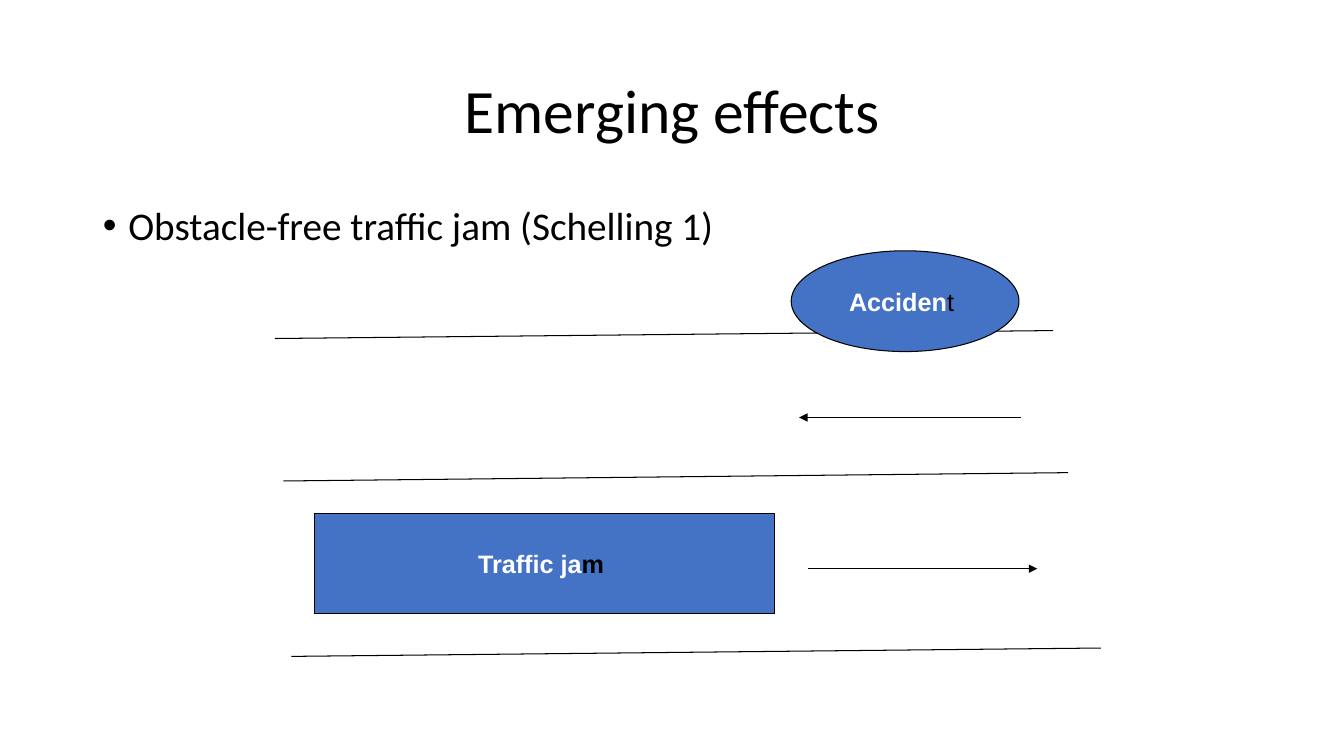
from dataclasses import dataclass

from lxml.etree import SubElement
from pptx import Presentation
from pptx.dml.color import RGBColor
from pptx.enum.shapes import MSO_CONNECTOR, MSO_SHAPE
from pptx.enum.text import MSO_ANCHOR, PP_ALIGN
from pptx.oxml.ns import qn
from pptx.util import Cm, Pt

COLORS = {"ink": "000000", "fill": "4472C4", "label": "FFFFFF", "background": "FFFFFF"}


@dataclass(frozen=True)
class Line:
    x1: float
    y1: float
    x2: float
    y2: float
    arrow: bool = False


@dataclass(frozen=True)
class Run:
    text: str
    color: str
    bold: bool


@dataclass(frozen=True)
class Box:
    kind: MSO_SHAPE
    x: float
    y: float
    w: float
    h: float
    runs: tuple[Run, ...]


ITEMS = (
    Line(6.93, 8.53, 26.54, 8.33),
    Line(7.14, 12.12, 26.92, 11.91),
    Line(7.34, 16.54, 27.74, 16.33),
    Box(MSO_SHAPE.OVAL, 19.94, 6.32, 5.74, 2.54,
        (Run("Acciden", "label", True), Run("t ", "ink", False))),
    Line(25.73, 10.52, 20.14, 10.52, arrow=True),
    Line(20.35, 14.33, 26.14, 14.33, arrow=True),
    Box(MSO_SHAPE.RECTANGLE, 7.92, 12.93, 11.61, 2.54,
        (Run("Traffic ja", "label", True), Run("m ", "ink", True))),
)


def rgb(name: str) -> RGBColor:
    """Return the named colour."""
    return RGBColor.from_string(COLORS[name])


def add_run(p, text: str, font: str, size: int, color: str, bold: bool = False) -> None:
    """Append a formatted run to a paragraph."""
    r = p.add_run()
    r.text = text
    r.font.name = font
    r.font.size = Pt(size)
    r.font.bold = bold
    r.font.color.rgb = rgb(color)


def fill_placeholder(sp, top: float, height: float, text: str, size: int):
    """Place a placeholder, write its text and return the paragraph."""
    sp.left, sp.top, sp.width, sp.height = Cm(2.34), Cm(top), Cm(29.21), Cm(height)
    p = sp.text_frame.paragraphs[0]
    p.line_spacing = 0.9
    add_run(p, text, "Calibri", size, "ink")
    return p


def format_line(line) -> None:
    """Apply the thin black outline."""
    line.color.rgb = rgb("ink")
    line.width = Pt(0.75)


def draw_line(s, item: Line) -> None:
    """Draw a road edge or a direction arrow."""
    sp = s.shapes.add_connector(
        MSO_CONNECTOR.STRAIGHT, Cm(item.x1), Cm(item.y1), Cm(item.x2), Cm(item.y2))
    format_line(sp.line)
    if item.arrow:
        SubElement(sp.line._get_or_add_ln(), qn("a:tailEnd"), type="triangle")
    SubElement(sp._element.spPr, qn("a:effectLst"))


def draw_box(s, item: Box) -> None:
    """Draw a labelled shape."""
    sp = s.shapes.add_shape(item.kind, Cm(item.x), Cm(item.y), Cm(item.w), Cm(item.h))
    sp.shadow.inherit = False
    sp.fill.solid()
    sp.fill.fore_color.rgb = rgb("fill")
    format_line(sp.line)
    tf = sp.text_frame
    tf.word_wrap = False
    tf.vertical_anchor = MSO_ANCHOR.MIDDLE
    p = tf.paragraphs[0]
    p.alignment = PP_ALIGN.CENTER
    for run in item.runs:
        add_run(p, run.text, "Arial", 18, run.color, run.bold)


def main() -> None:
    """Build and save the slide."""
    prs = Presentation()
    prs.slide_width, prs.slide_height = Cm(33.87), Cm(19.05)
    s = prs.slides.add_slide(prs.slide_layouts[1])
    s.background.fill.solid()
    s.background.fill.fore_color.rgb = rgb("background")

    title, body = s.placeholders
    p = fill_placeholder(title, 1.02, 3.68, "Emerging effects", 44)
    p.alignment = PP_ALIGN.CENTER
    title.text_frame.vertical_anchor = MSO_ANCHOR.MIDDLE

    p = fill_placeholder(body, 5.08, 12.09, "Obstacle-free traffic jam (Schelling 1)", 28)
    p.space_before = Pt(10)
    pPr = p._p.get_or_add_pPr()
    pPr.set("marL", str(Cm(0.64)))
    pPr.set("indent", str(-Cm(0.64)))
    SubElement(pPr, qn("a:buFont"), typeface="Arial")
    SubElement(pPr, qn("a:buChar"), char="•")

    for item in ITEMS:
        if isinstance(item, Line):
            draw_line(s, item)
        else:
            draw_box(s, item)
    prs.save("out.pptx")


if __name__ == "__main__":
    main()
